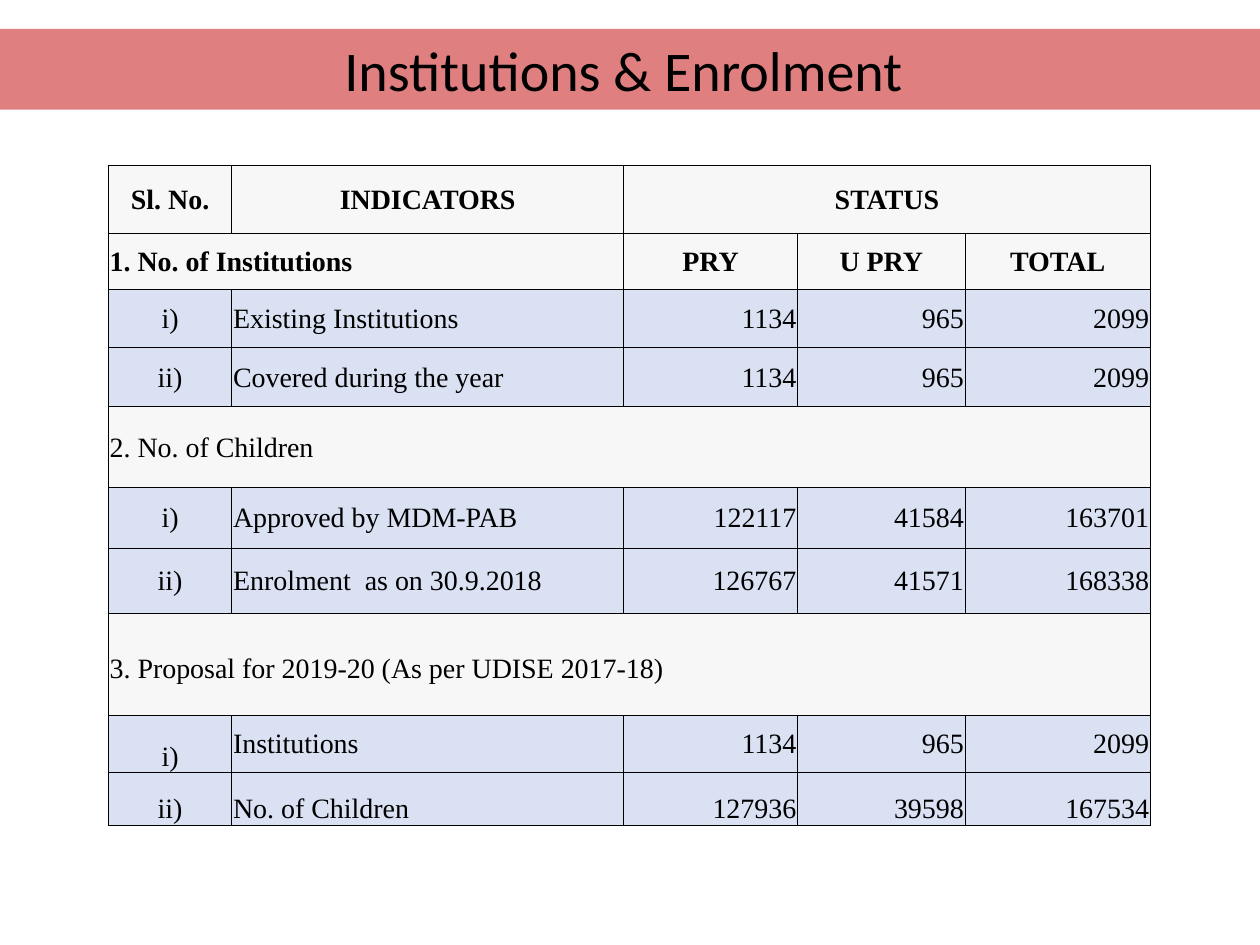
"""Build the Institutions & Enrolment slide with its status table."""
import lxml.etree
import pptx
import pptx.dml.color
import pptx.enum.text
import pptx.oxml.ns
import pptx.util

Inches = pptx.util.Inches
Pt = pptx.util.Pt
RGBColor = pptx.dml.color.RGBColor
Align = pptx.enum.text.PP_ALIGN
Anchor = pptx.enum.text.MSO_ANCHOR
qn = pptx.oxml.ns.qn

RED = RGBColor(0xC0, 0x00, 0x00)
GREY = RGBColor(0xF1, 0xF0, 0xF0)
BLUE = RGBColor(0xD9, 0xE1, 0xF2)
BLACK = RGBColor(0x00, 0x00, 0x00)

WIDTHS = [0.98, 3.11, 1.38, 1.33, 1.47]
HEIGHTS = [0.54, 0.45, 0.46, 0.47, 0.64, 0.48, 0.52, 0.81, 0.45, 0.42]
ROWS = [
    ["Sl. No.", "INDICATORS", "STATUS", "", ""],
    ["1. No. of Institutions", "", "PRY", "U PRY", "TOTAL"],
    ["i)", "Existing Institutions", "1134", "965", "2099"],
    ["ii)", "Covered during the year", "1134", "965", "2099"],
    ["2. No. of Children", "", "", "", ""],
    ["i)", "Approved by MDM-PAB", "122117", "41584", "163701"],
    ["ii)", "Enrolment  as on 30.9.2018", "126767", "41571", "168338"],
    ["3. Proposal for 2019-20 (As per UDISE 2017-18)", "", "", "", ""],
    ["i)", "Institutions", "1134", "965", "2099"],
    ["ii)", "No. of Children", "127936", "39598", "167534"],
]
SPANS = [(0, 2, 4), (1, 0, 1), (4, 0, 4), (7, 0, 4)]
HEADS = (0, 1)
BANDS = (0, 1, 4, 7)
SIDES = [Align.CENTER, Align.LEFT] + [Align.RIGHT] * 3
LOW = {(8, 0)} | {(9, col) for col in range(5)}


def apply(target, values):
    """Set each attribute of the target from a dict."""
    for name, value in values.items():
        setattr(target, name, value)


def tint(fill, node, color, clear=False):
    """Fill with a colour, half transparent if clear."""
    fill.solid()
    fill.fore_color.rgb = color
    if clear:
        tone = node.find(qn("a:solidFill")).find(qn("a:srgbClr"))
        lxml.etree.SubElement(tone, qn("a:alpha"), val="50000")


def write(frame, text, side, size, face, bold=False):
    """Put one formatted line of text into a frame."""
    line = frame.paragraphs[0]
    line.alignment = side
    run = line.add_run()
    run.text = text
    apply(run.font, {"size": Pt(size), "name": face, "bold": bold})
    run.font.color.rgb = BLACK


def edge(props):
    """Draw thin black borders on a cell."""
    for tag in ("a:lnL", "a:lnR", "a:lnT", "a:lnB"):
        line = lxml.etree.SubElement(props, qn(tag), w=str(Pt(0.5)))
        paint = lxml.etree.SubElement(line, qn("a:solidFill"))
        lxml.etree.SubElement(paint, qn("a:srgbClr"), val=str(BLACK))


def add_title(slide):
    """Shape the title placeholder into the red band."""
    title = slide.shapes.title
    apply(title, {"left": Inches(0), "top": Inches(0.23),
                  "width": Inches(10), "height": Inches(0.64)})
    apply(title.text_frame, {"word_wrap": True,
                             "auto_size": pptx.enum.text.MSO_AUTO_SIZE.NONE,
                             "vertical_anchor": Anchor.MIDDLE})
    tint(title.fill, title.element.spPr, RED, True)
    write(title.text_frame, "Institutions & Enrolment ", Align.CENTER, 32, "Calibri")


def side_of(row, col):
    """Choose the alignment of a cell."""
    if row in BANDS and col == 0 and row > 0:
        return Align.LEFT
    return Align.CENTER if row in HEADS else SIDES[col]


def fill_cell(cell, row, col, text):
    """Format one cell and write its text."""
    inset = Inches(0.01)
    apply(cell, {"margin_left": inset, "margin_right": inset,
                 "margin_top": Inches(0.08) if row == 7 else inset,
                 "margin_bottom": 0,
                 "vertical_anchor": Anchor.BOTTOM if (row, col) in LOW else Anchor.MIDDLE})
    props = cell._tc.get_or_add_tcPr()
    edge(props)
    band = row in BANDS
    tint(cell.fill, props, GREY if band else BLUE, band)
    if text:
        write(cell.text_frame, text, side_of(row, col), 16, "Times New Roman", row in HEADS)


def add_grid(slide):
    """Add the status table."""
    grid = slide.shapes.add_table(
        len(ROWS), len(WIDTHS), Inches(0.86), Inches(1.31),
        Inches(sum(WIDTHS)), Inches(sum(HEIGHTS))).table
    apply(grid, {"first_row": False, "horz_banding": False})
    for col, width in zip(grid.columns, WIDTHS):
        col.width = Inches(width)
    for row, height in zip(grid.rows, HEIGHTS):
        row.height = Inches(height)
    for row, first, last in SPANS:
        grid.cell(row, first).merge(grid.cell(row, last))
    for row, texts in enumerate(ROWS):
        for col, text in enumerate(texts):
            fill_cell(grid.cell(row, col), row, col, text)


def main():
    """Make the deck and save it."""
    deck = pptx.Presentation()
    apply(deck, {"slide_width": Inches(10), "slide_height": Inches(7.5)})
    slide = deck.slides.add_slide(deck.slide_layouts[5])
    add_title(slide)
    add_grid(slide)
    deck.save("out.pptx")


if __name__ == "__main__":
    main()
